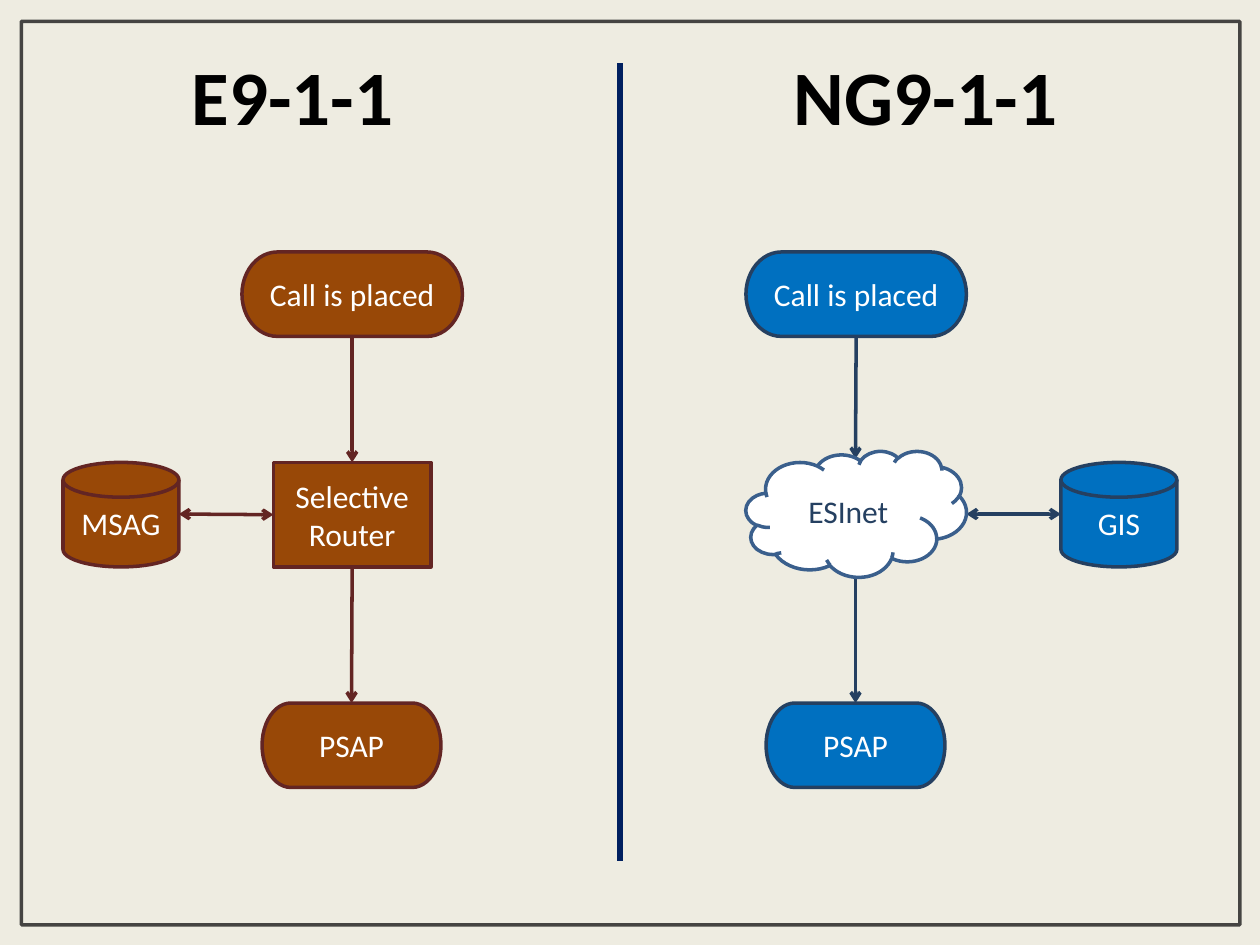
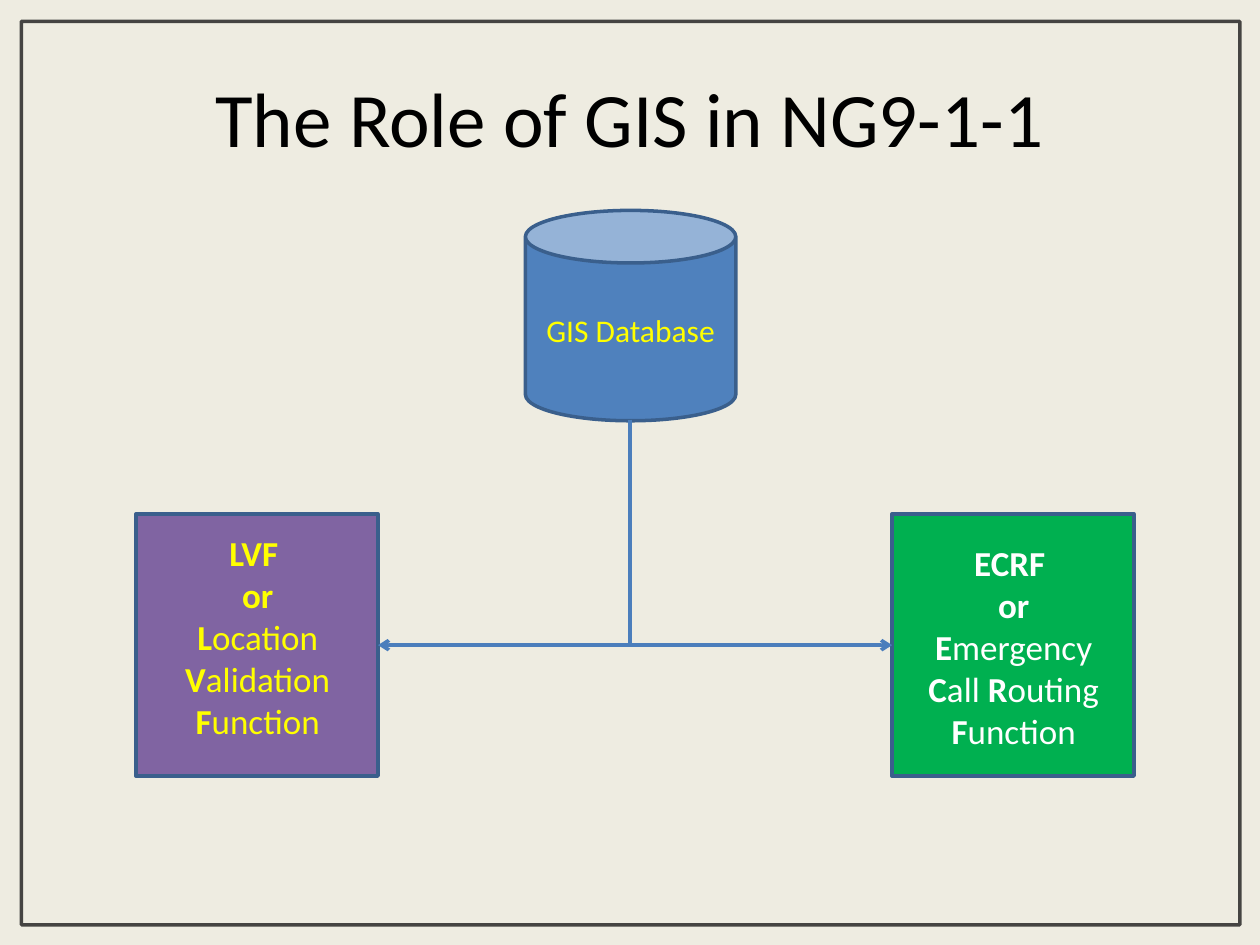
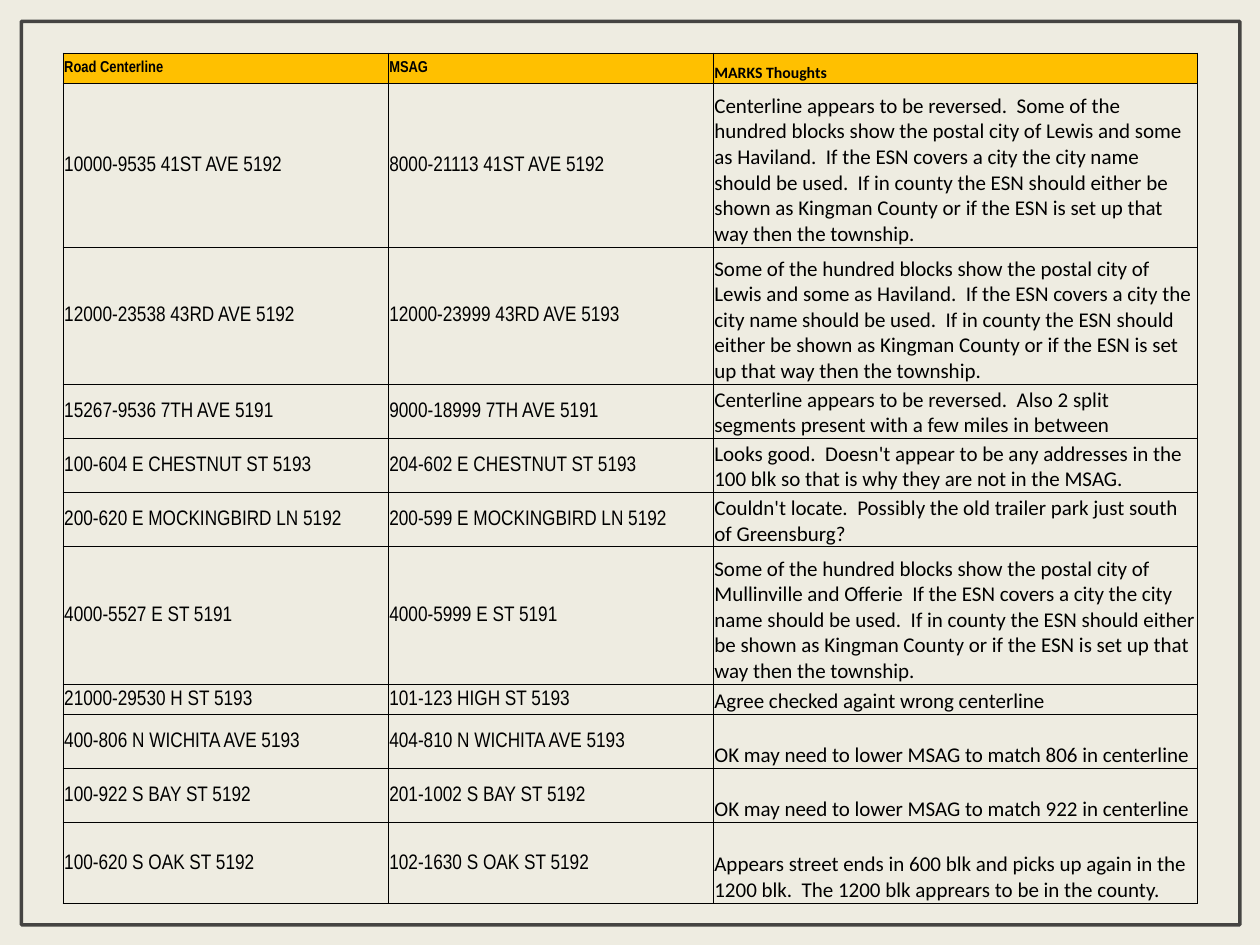
import pptx
import pptx.util
import pptx.dml.color
import pptx.enum.shapes
import pptx.enum.text
import pptx.oxml
from dataclasses import dataclass
from lxml import etree

Inches, Pt = pptx.util.Inches, pptx.util.Pt
SHAPE = pptx.enum.shapes.MSO_SHAPE
CONNECTOR = pptx.enum.shapes.MSO_CONNECTOR
ANCHOR = pptx.enum.text.MSO_ANCHOR
ALIGN = pptx.enum.text.PP_ALIGN
TOP, LEFT, BOTTOM, RIGHT = range(4)


@dataclass(frozen=True)
class Theme:
    font: str = "Calibri"
    narrow: str = "Arial Narrow"
    background: str = "EEECE1"
    frame: str = "0D0D0D"
    black: str = "000000"
    white: str = "FFFFFF"
    yellow: str = "FFFF00"
    brown: str = "984807"
    maroon: str = "632523"
    blue: str = "0070C0"
    navy: str = "254061"
    divider: str = "002060"
    steel: str = "4F81BD"
    steel_line: str = "3A5F8C"
    link: str = "4B7EBC"
    green: str = "00B050"
    purple: str = "8064A2"
    header: str = "FFC000"
    title_size: int = 44
    label_size: int = 18
    box_size: int = 20
    cell_size: int = 12
    header_size: int = 9
    line_width: int = 2


def rgb(value):
    return pptx.dml.color.RGBColor.from_string(value)


def sub(parent, tag, **attrs):
    el = etree.SubElement(parent, pptx.oxml.ns.qn(tag))
    for key, value in attrs.items():
        el.set(key, str(value))
    return el


class Deck:
    def __init__(self, theme):
        self.theme = theme
        self.prs = pptx.Presentation()
        self.prs.slide_width, self.prs.slide_height = Inches(10), Inches(7.5)
        fill = self.prs.slide_master.background.fill
        fill.solid()
        fill.fore_color.rgb = rgb(theme.background)
        self.s = None

    def slide(self, titled=True):
        self.s = self.prs.slides.add_slide(self.prs.slide_layouts[5 if titled else 6])

    def run(self, p, text, size, color, bold=False, font=None):
        r = p.add_run()
        r.text = text
        r.font.name = font or self.theme.font
        r.font.size, r.font.bold = Pt(size), bold
        r.font.color.rgb = rgb(color)

    def title(self, text, x, y, w, h, bold=False):
        sp = self.s.shapes.title
        sp.left, sp.top, sp.width, sp.height = map(Inches, (x, y, w, h))
        tf = sp.text_frame
        tf.vertical_anchor = ANCHOR.MIDDLE
        p = tf.paragraphs[0]
        p.alignment = ALIGN.CENTER
        self.run(p, text, self.theme.title_size, self.theme.black, bold)
        return tf

    def stroke(self, line, color, width=None):
        line.color.rgb = rgb(color)
        line.width = Pt(width or self.theme.line_width)

    def shape(self, kind, x, y, w, h, fill, line, text="", color=None):
        sp = self.s.shapes.add_shape(kind, *map(Inches, (x, y, w, h)))
        sp.shadow.inherit = False
        if fill:
            sp.fill.solid()
            sp.fill.fore_color.rgb = rgb(fill)
        else:
            sp.fill.background()
        self.stroke(sp.line, line)
        if text:
            tf = sp.text_frame
            tf.word_wrap, tf.vertical_anchor = True, ANCHOR.MIDDLE
            p = tf.paragraphs[0]
            p.alignment = ALIGN.CENTER
            self.run(p, text, self.theme.label_size, color or self.theme.white)
        return sp

    def text(self, x, y, w, h, paragraphs, size, color):
        """Each paragraph is a list of (text, bold) runs."""
        tf = self.s.shapes.add_textbox(*map(Inches, (x, y, w, h))).text_frame
        tf.word_wrap = True
        tf.auto_size = pptx.enum.text.MSO_AUTO_SIZE.SHAPE_TO_FIT_TEXT
        for i, runs in enumerate(paragraphs):
            p = tf.add_paragraph() if i else tf.paragraphs[0]
            p.alignment = ALIGN.CENTER
            for words, bold in runs:
                self.run(p, words, size, color, bold)

    def line(self, start, end, color, width=None, head=False, tail=False,
             begin=None, finish=None, kind=CONNECTOR.STRAIGHT):
        """begin and finish are (shape, side) pairs to join."""
        cn = self.s.shapes.add_connector(kind, *map(Inches, (*start, *end)))
        if begin:
            cn.begin_connect(*begin)
        if finish:
            cn.end_connect(*finish)
        self.stroke(cn.line, color, width)
        ln = cn.line._get_or_add_ln()
        for tag, wanted in (("a:headEnd", head), ("a:tailEnd", tail)):
            if wanted:
                sub(ln, tag, type="arrow")
        sub(cn._element.spPr, "a:effectLst")
        return cn

    def elbow(self, start, end, color, begin, finish):
        """A one-bend arrow that leaves downward and then turns sideways."""
        cn = self.line(start, end, color, tail=True, begin=begin, finish=finish,
                       kind=CONNECTOR.ELBOW)
        (x1, y1), (x2, y2) = start, end
        w, h = y2 - y1, abs(x2 - x1)
        cn.left, cn.top = Inches((x1 + x2 - w) / 2), Inches((y1 + y2 - h) / 2)
        cn.width, cn.height = Inches(w), Inches(h)
        rightward = x2 > x1
        xfrm = cn._element.spPr.xfrm
        xfrm.set("rot", str((270 if rightward else 90) * 60000))
        xfrm.set("flipH", str(int(rightward)))
        xfrm.set("flipV", "0")
        cn._element.spPr.find(pptx.oxml.ns.qn("a:prstGeom")).set("prst", "bentConnector2")

    def cell(self, cell, text, size, font, fill, bold, anchor):
        cell.margin_left = cell.margin_right = cell.margin_top = Inches(0.01)
        cell.margin_bottom = 0
        cell.vertical_anchor = anchor
        self.run(cell.text_frame.paragraphs[0], text, size, self.theme.black, bold, font)
        tc_pr = cell._tc.get_or_add_tcPr()
        for side in "LRTB":
            ln = sub(tc_pr, f"a:ln{side}", w=Pt(0.5))
            sub(sub(ln, "a:solidFill"), "a:srgbClr", val=self.theme.black)
        if fill:
            cell.fill.solid()
            cell.fill.fore_color.rgb = rgb(fill)
        else:
            cell.fill.background()

    def table(self, x, y, widths, heights, rows):
        t = self.theme
        tbl = self.s.shapes.add_table(
            len(rows), len(widths),
            *map(Inches, (x, y, sum(widths), sum(heights)))).table
        tbl.first_row = tbl.horz_banding = False
        for col, w in zip(tbl.columns, widths):
            col.width = Inches(w)
        for i, (row, h) in enumerate(zip(rows, heights)):
            tbl.rows[i].height = Inches(h)
            for j, text in enumerate(row):
                notes = j == len(row) - 1
                self.cell(tbl.cell(i, j), text,
                          t.cell_size if i else t.header_size,
                          t.font if notes else t.narrow,
                          None if i else t.header, i == 0,
                          ANCHOR.BOTTOM if notes else ANCHOR.MIDDLE)

    def frame(self):
        sp = self.shape(SHAPE.RECTANGLE, 0.17, 0.17, 9.67, 7.17, None, self.theme.frame)
        color = sp.line._get_or_add_ln().find(".//" + pptx.oxml.ns.qn("a:srgbClr"))
        sub(color, "a:alpha", val=75000)


def call_flow(deck, cx, fill, line, hub, hub_top, hub_bottom, hub_side, store, store_x):
    """One column: call, hub, answering point, and a database beside the hub."""
    call = deck.shape(SHAPE.FLOWCHART_TERMINATOR, cx - 0.87, 2, 1.75, 0.67,
                      fill, line, "Call is placed")
    deck.shape(SHAPE.FLOWCHART_MAGNETIC_DISK, store_x, 3.67, 0.92, 0.83, fill, line, store)
    psap = deck.shape(SHAPE.FLOWCHART_TERMINATOR, cx - 0.71, 5.58, 1.42, 0.67,
                      fill, line, "PSAP")
    store_side = store_x + 0.92 if store_x < cx else store_x

    def join(side):
        return (hub, side) if hub else None

    deck.line((cx, 2.67), (cx, hub_top), line, tail=True,
              begin=(call, BOTTOM), finish=join(TOP))
    deck.line((hub_side, 4.08), (store_side, 4.08), line, head=True, tail=True,
              begin=join(LEFT))
    deck.line((cx, hub_bottom), (cx, 5.58), line, tail=True,
              begin=join(BOTTOM), finish=(psap, TOP))


def comparison(deck):
    t = deck.theme
    deck.slide()
    # Two headings on one line, set apart by a tab stop
    tf = deck.title("E9-1-1\tNG9-1-1", 0.42, 0.25, 9.17, 1, bold=True)
    tf.margin_left = Inches(1.1)
    p = tf.paragraphs[0]
    p.alignment = ALIGN.LEFT
    sub(sub(p._p.get_or_add_pPr(), "a:tabLst"), "a:tab", pos=Inches(4.78), algn="l")

    # Existing service
    router = deck.shape(SHAPE.FLOWCHART_PROCESS, 2.17, 3.67, 1.25, 0.83,
                        t.brown, t.maroon, "Selective Router")
    call_flow(deck, 2.79, t.brown, t.maroon, router, 3.67, 4.5, 2.17, "MSAG", 0.5)

    # Next generation, with the cloud over the arrow ends
    call_flow(deck, 6.79, t.blue, t.navy, None, 3.64, 4.58, 7.67, "GIS", 8.42)
    deck.shape(SHAPE.CLOUD, 5.92, 3.58, 1.75, 1, t.white, t.steel_line, "ESInet", t.navy)

    deck.line((4.92, 0.5), (4.92, 6.83), t.divider, width=3)
    deck.frame()


def gis_role(deck):
    t = deck.theme
    deck.slide()
    deck.title("The Role of GIS in NG9-1-1", 0.5, 0.3, 9, 1.25)

    # Database
    can = deck.shape(SHAPE.CAN, 4.17, 1.67, 1.67, 1.67, t.steel, t.steel_line)
    deck.text(4.17, 2.42, 1.67, 0.4, [[("GIS Database", False)]], t.label_size, t.yellow)

    # Functions fed by the database
    functions = [
        (7.08, 4.25, t.green, t.white, LEFT, "ECRF ",
         [("E", True), ("mergency ", False), ("C", True), ("all ", False),
          ("R", True), ("outing ", False), ("F", True), ("unction", False)]),
        (1.08, 4.17, t.purple, t.yellow, RIGHT, "LVF ",
         [("L", True), ("ocation ", False), ("V", True), ("alidation ", False),
          ("F", True), ("unction", False)]),
    ]
    for x, text_y, fill, color, side, short, full in functions:
        box = deck.shape(SHAPE.RECTANGLE, x, 4.08, 1.92, 2.08, fill, t.steel_line)
        deck.text(x + 0.09, text_y, 1.75, 1.78,
                  [[(short, True)], [("or", True)], full], t.box_size, color)
        end_x = x if side == LEFT else x + 1.92
        deck.elbow((5, 3.33), (end_x, 5.12), t.link, (can, 3), (box, side))
    deck.frame()


def address_review(deck):
    deck.slide(titled=False)
    city_rule = ("If the ESN covers a city the city name should be used.  "
                 "If in county the ESN should either be shown as Kingman County "
                 "or if the ESN is set up that way then the township.")
    lewis = ("Some of the hundred blocks show the postal city of Lewis and some "
             "as Haviland.  " + city_rule)
    reversed_line = "Centerline appears to be reversed.  "
    lower = "OK may need to lower MSAG to match {} in centerline"
    rows = [
        ("Road Centerline", "MSAG", "MARKS Thoughts"),
        ("10000-9535 41ST AVE 5192", "8000-21113 41ST AVE 5192", reversed_line + lewis),
        ("12000-23538 43RD AVE 5192", "12000-23999 43RD AVE 5193", lewis),
        ("15267-9536 7TH AVE 5191", "9000-18999 7TH AVE 5191",
         reversed_line + "Also 2 split segments present with a few miles in between"),
        ("100-604 E CHESTNUT ST 5193", "204-602 E CHESTNUT ST 5193",
         "Looks good.  Doesn't appear to be any addresses in the 100 blk so that is "
         "why they are not in the MSAG."),
        ("200-620 E MOCKINGBIRD LN 5192", "200-599 E MOCKINGBIRD LN 5192",
         "Couldn't locate.  Possibly the old trailer park just south of Greensburg?"),
        ("4000-5527 E ST 5191", "4000-5999 E ST 5191",
         "Some of the hundred blocks show the postal city of Mullinville and Offerie  "
         + city_rule),
        ("21000-29530 H ST 5193", "101-123 HIGH ST 5193",
         "Agree checked againt wrong centerline"),
        ("400-806 N WICHITA AVE 5193", "404-810 N WICHITA AVE 5193", lower.format(806)),
        ("100-922 S BAY ST 5192", "201-1002 S BAY ST 5192", lower.format(922)),
        ("100-620 S OAK ST 5192", "102-1630 S OAK ST 5192",
         "Appears street ends in 600 blk and picks up again in the 1200 blk.  "
         "The 1200 blk apprears to be in the county."),
    ]
    heights = [0.24, 1.3, 1.09, 0.43, 0.43, 0.43, 1.09, 0.24, 0.43, 0.43, 0.64]
    deck.table(0.5, 0.42, [2.58, 2.58, 3.84], heights, rows)
    deck.frame()


def main():
    deck = Deck(Theme())
    comparison(deck)
    gis_role(deck)
    address_review(deck)
    deck.prs.save("out.pptx")


if __name__ == "__main__":
    main()
